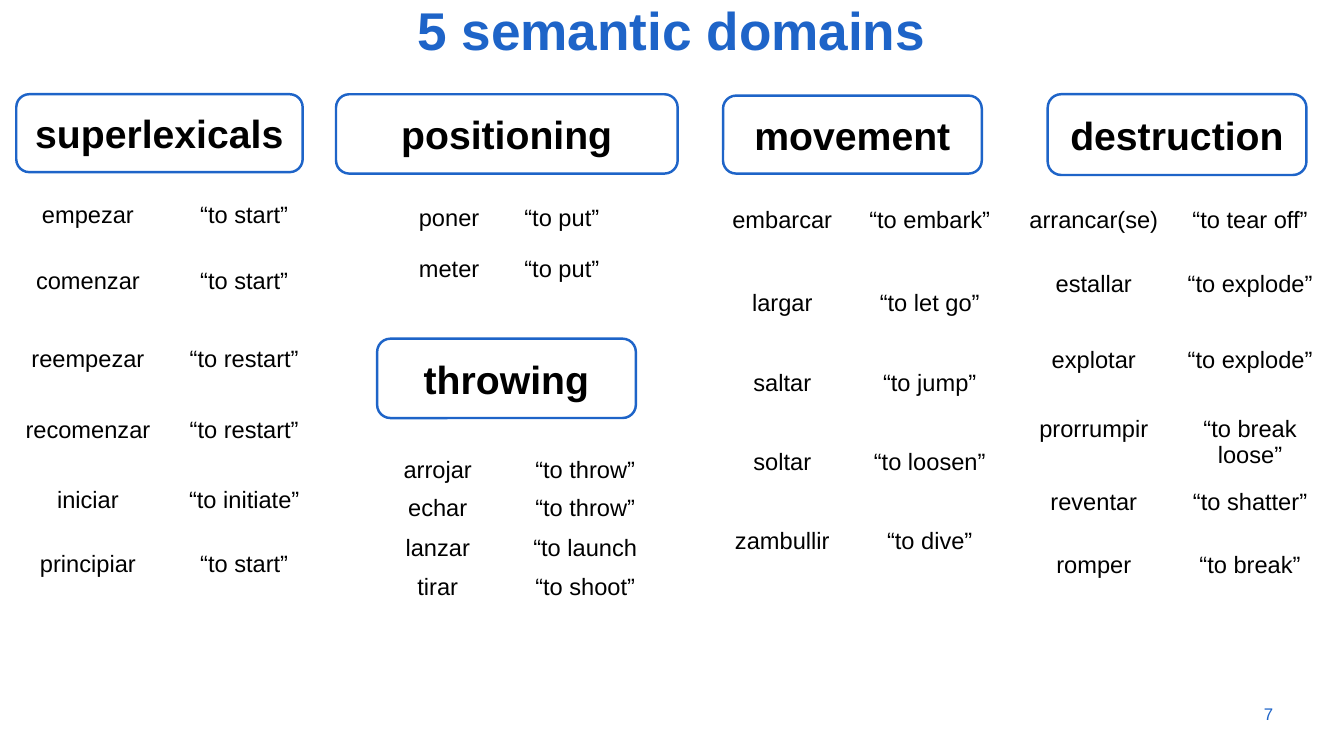
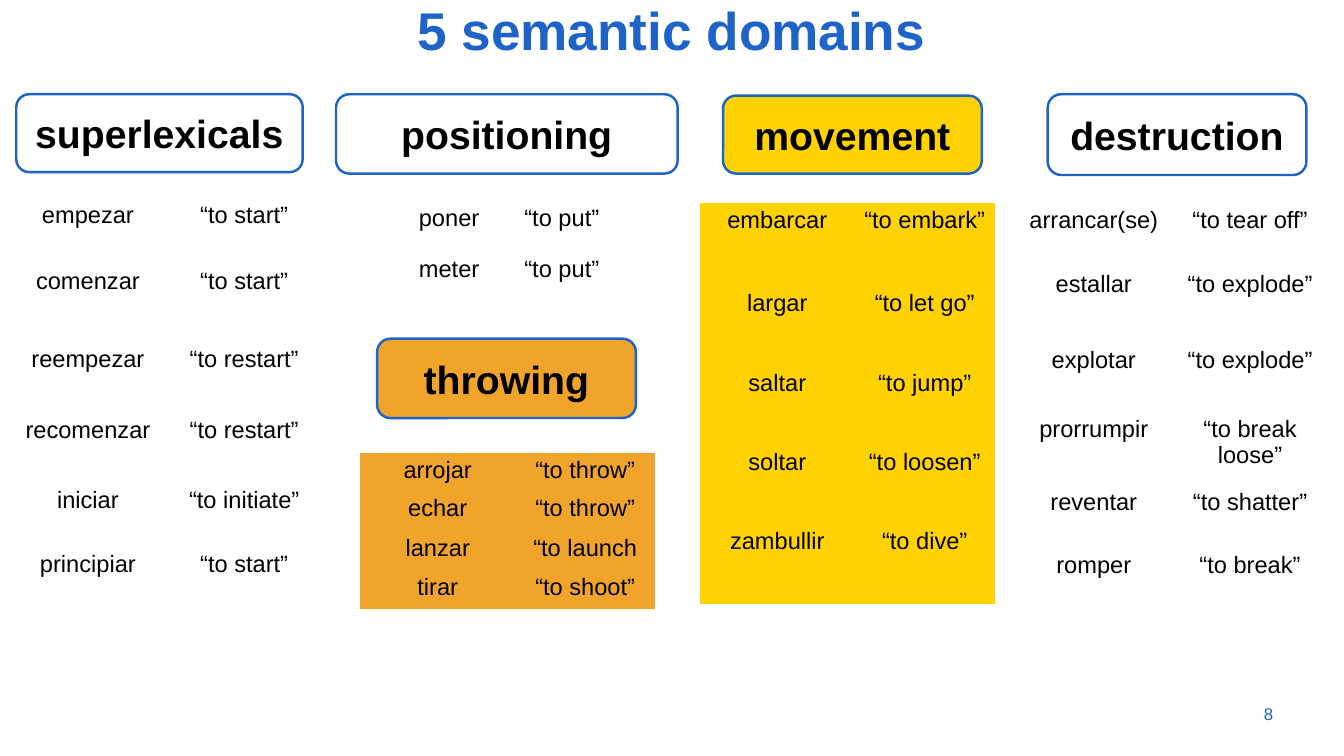
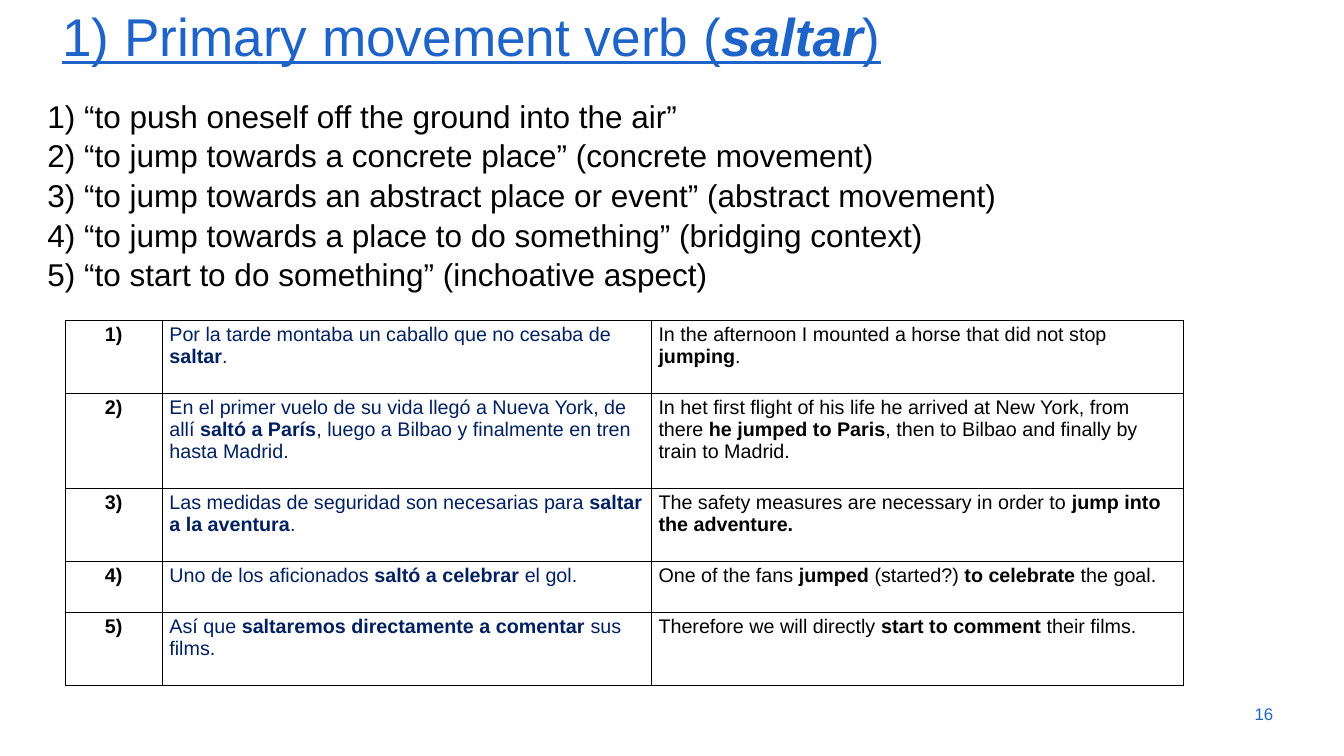
"""Build three slides on semantic domains of Spanish verbs and the verb saltar."""
from lxml.etree import SubElement
from pptx import Presentation
from pptx.dml.color import RGBColor
from pptx.enum.shapes import MSO_SHAPE
from pptx.enum.text import MSO_ANCHOR, PP_ALIGN
from pptx.oxml.ns import qn
from pptx.util import Inches, Pt

FONT = "Arial"
BLUE = RGBColor(0x1E, 0x64, 0xC8)
NAVY = RGBColor(0x00, 0x20, 0x60)
BLACK = RGBColor(0x00, 0x00, 0x00)
WHITE = RGBColor(0xFF, 0xFF, 0xFF)
YELLOW = RGBColor(0xFF, 0xD2, 0x00)
ORANGE = RGBColor(0xF1, 0xA4, 0x2B)
NO_STYLE = "{2D5ABB26-0587-4C30-8999-92F81FD0307C}"

DOMAINS = [
    {"name": "superlexicals", "box": (0.23, 1.33, 4.04, 1.1), "origin": (0.22, 2.81),
     "columns": (2.04, 2.37), "rows": (0.93, 1.1, 1, 0.98, 0.91, 0.84),
     "verbs": [("empezar", "“to start”"), ("comenzar", "“to start”"),
               ("reempezar", "“to restart”"), ("recomenzar", "“to restart”"),
               ("iniciar", "“to initiate”"), ("principiar", "“to start”")]},
    {"name": "positioning", "box": (4.74, 1.33, 4.82, 1.12), "origin": (5.57, 2.84),
     "columns": (1.53, 1.65), "rows": (0.72, 0.72),
     "verbs": [("poner", "“to put”"), ("meter", "“to put”")]},
    {"name": "throwing", "box": (5.32, 4.78, 3.65, 1.12), "origin": (5.08, 6.4),
     "columns": (2.19, 1.97), "rows": (0.54, 0.57, 0.54, 0.54),
     "verbs": [("arrojar", "“to throw”"), ("echar", "“to throw”"),
               ("lanzar", "“to launch"), ("tirar", "“to shoot”")]},
    {"name": "movement", "box": (10.2, 1.35, 3.65, 1.1), "origin": (9.94, 2.87),
     "columns": (2.19, 1.97), "rows": (1.18, 1.12, 1.12, 1.12, 1.12),
     "verbs": [("embarcar", "“to embark”"), ("largar", "“to let go”"),
               ("saltar", "“to jump”"), ("soltar", "“to loosen”"),
               ("zambullir", "“to dive”")]},
    {"name": "destruction", "box": (14.78, 1.33, 3.65, 1.14), "origin": (14.41, 2.87),
     "columns": (2.04, 2.37), "rows": (0.91, 1.07, 0.97, 1.03, 0.89, 0.81),
     "verbs": [("arrancar(se)", "“to tear off”"), ("estallar", "“to explode”"),
               ("explotar", "“to explode”"), ("prorrumpir", "“to break loose”"),
               ("reventar", "“to shatter”"), ("romper", "“to break”")]},
]
HIGHLIGHTS = {"throwing": ORANGE, "movement": YELLOW}
HIGHLIGHT_ORIGINS = {"movement": (9.87, 2.87)}

MEANINGS = [
    "1) “to push oneself off the ground into the air”",
    "2) “to jump towards a concrete place” (concrete movement)",
    "3) “to jump towards an abstract place or event” (abstract movement)",
    "4) “to jump towards a place to do something” (bridging context)",
    "5) “to start to do something” (inchoative aspect)",
]
EXAMPLE_COLUMNS = (1.37, 6.9, 7.51)
EXAMPLE_ROWS = (1.03, 1.34, 1.03, 0.72, 1.03)
EXAMPLE_STYLES = [(PP_ALIGN.CENTER, BLACK), (PP_ALIGN.LEFT, NAVY), (PP_ALIGN.LEFT, BLACK)]
EXAMPLES = [
    ("*1)*", "Por la tarde montaba un caballo que no cesaba de *saltar*.",
     "In the afternoon I mounted a horse that did not stop *jumping*."),
    ("*2)*", "En el primer vuelo de su vida llegó a Nueva York, de allí *saltó a París*, "
     "luego a Bilbao y finalmente en tren hasta Madrid.",
     "In het first flight of his life he arrived at New York, from there "
     "*he jumped to Paris*, then to Bilbao and finally by train to Madrid."),
    ("*3)*", "Las medidas de seguridad son necesarias para *saltar a la aventura*.",
     "The safety measures are necessary in order to *jump into the adventure.*"),
    ("*4)*", "Uno de los aficionados *saltó a celebrar *el gol.",
     "One of the fans *jumped* (started?) *to celebrate *the goal."),
    ("*5)*", "Así que *saltaremos directamente a comentar *sus films.",
     "Therefore we will directly *start to comment *their films."),
]


def add_runs(paragraph, text, size, color, **marked):
    """Add text run by run, styling the parts between asterisks."""
    for index, part in enumerate(text.split("*")):
        if part:
            run = paragraph.add_run()
            run.text = part
            run.font.name = FONT
            run.font.size = Pt(size)
            run.font.color.rgb = color
            if index % 2:
                for name, value in marked.items():
                    setattr(run.font, name, value)


def add_text_box(slide, box, anchor=MSO_ANCHOR.TOP):
    """Add a wrapping text box."""
    shape = slide.shapes.add_textbox(*map(Inches, box))
    shape.text_frame.word_wrap = True
    shape.text_frame.vertical_anchor = anchor
    return shape


def indent(paragraph):
    """Indent a whole paragraph."""
    paragraph._p.get_or_add_pPr().set("marL", str(Inches(0.4)))


def add_title(slide, text, left, top):
    """Add the title and return its paragraph."""
    shape = add_text_box(slide, (left, top, 17.18, 0.94))
    paragraph = shape.text_frame.paragraphs[0]
    add_runs(paragraph, text, 54, BLUE, bold=True, italic=len(text.split("*")[0]) > 0)
    return paragraph


def add_slide_number(slide, number):
    """Add the slide number at the lower right."""
    shape = add_text_box(slide, (17.05, 9.79, 1.01, 0.57), MSO_ANCHOR.MIDDLE)
    paragraph = shape.text_frame.paragraphs[0]
    paragraph.alignment = PP_ALIGN.RIGHT
    add_runs(paragraph, str(number), 17.1, BLUE)


def add_plain_table(slide, origin, columns, rows):
    """Add an unstyled table with the given column widths and row heights."""
    frame = slide.shapes.add_table(
        len(rows), len(columns), *map(Inches, (*origin, sum(columns), sum(rows))))
    for style in frame.element.iter(qn("a:tableStyleId")):
        style.text = NO_STYLE
    table = frame.table
    table.first_row = table.horz_banding = False
    for column, width in zip(table.columns, columns):
        column.width = Inches(width)
    for row, height in zip(table.rows, rows):
        row.height = Inches(height)
    return table


def set_fill(target, color):
    """Fill a shape or cell, or leave it clear."""
    if color is None:
        target.fill.background()
    else:
        target.fill.solid()
        target.fill.fore_color.rgb = color


def add_borders(cell):
    """Draw thin black lines around a cell."""
    properties = cell._tc.get_or_add_tcPr()
    for side in ("a:lnL", "a:lnR", "a:lnT", "a:lnB"):
        line = SubElement(properties, qn(side), w=str(Pt(1)))
        fill = SubElement(line, qn("a:solidFill"))
        SubElement(fill, qn("a:srgbClr"), val=str(BLACK))


def add_domain(slide, domain, color, origin):
    """Add a domain heading and its table of verbs."""
    heading = slide.shapes.add_shape(
        MSO_SHAPE.ROUNDED_RECTANGLE, *map(Inches, domain["box"]))
    heading.shadow.inherit = False
    set_fill(heading, color)
    heading.line.color.rgb = BLUE
    heading.line.width = Pt(2.5)
    heading.text_frame.word_wrap = True
    heading.text_frame.vertical_anchor = MSO_ANCHOR.MIDDLE
    paragraph = heading.text_frame.paragraphs[0]
    paragraph.alignment = PP_ALIGN.CENTER
    add_runs(paragraph, f"*{domain['name']}*", 39.8, BLACK, bold=True)

    table = add_plain_table(slide, origin, domain["columns"], domain["rows"])
    for row, verb in zip(table.rows, domain["verbs"]):
        for cell, text in zip(row.cells, verb):
            set_fill(cell, color)
            paragraph = cell.text_frame.paragraphs[0]
            paragraph.alignment = PP_ALIGN.CENTER
            add_runs(paragraph, text, 24, BLACK)


def build_domains(slide, number, colors, origins):
    """Fill a slide with the five domains."""
    title = add_title(slide, "*5 semantic domains*", 0.88, 0.01)
    title.alignment = PP_ALIGN.CENTER
    title.line_spacing = 0.9
    for domain in DOMAINS:
        name = domain["name"]
        add_domain(slide, domain, colors.get(name), origins.get(name, domain["origin"]))
    add_slide_number(slide, number)


def build_saltar(slide, number):
    """Fill a slide with the meanings and examples of saltar."""
    title = add_title(slide, "1) Primary movement verb (*saltar*)", 0.38, 0)
    indent(title)
    for run in title.runs:
        run.font.underline = True

    body = add_text_box(slide, (0.17, 1.29, 18.6, 9.38))
    set_fill(body, WHITE)
    frame = body.text_frame
    for index, meaning in enumerate(MEANINGS):
        paragraph = frame.add_paragraph() if index else frame.paragraphs[0]
        indent(paragraph)
        paragraph.line_spacing = 1.05
        add_runs(paragraph, meaning, 32, BLACK)

    table = add_plain_table(slide, (0.92, 4.52), EXAMPLE_COLUMNS, EXAMPLE_ROWS)
    for row, example in zip(table.rows, EXAMPLES):
        for cell, text, (alignment, color) in zip(row.cells, example, EXAMPLE_STYLES):
            add_borders(cell)
            set_fill(cell, None)
            paragraph = cell.text_frame.paragraphs[0]
            paragraph.alignment = alignment
            add_runs(paragraph, text, 20, color, bold=True)
    add_slide_number(slide, number)


def main():
    """Build and save the presentation."""
    presentation = Presentation()
    presentation.slide_width = Inches(18.96)
    presentation.slide_height = Inches(10.67)
    blank = presentation.slide_layouts[6]
    build_domains(presentation.slides.add_slide(blank), 7, {}, {})
    build_domains(presentation.slides.add_slide(blank), 8, HIGHLIGHTS, HIGHLIGHT_ORIGINS)
    build_saltar(presentation.slides.add_slide(blank), 16)
    presentation.save("out.pptx")


if __name__ == "__main__":
    main()
